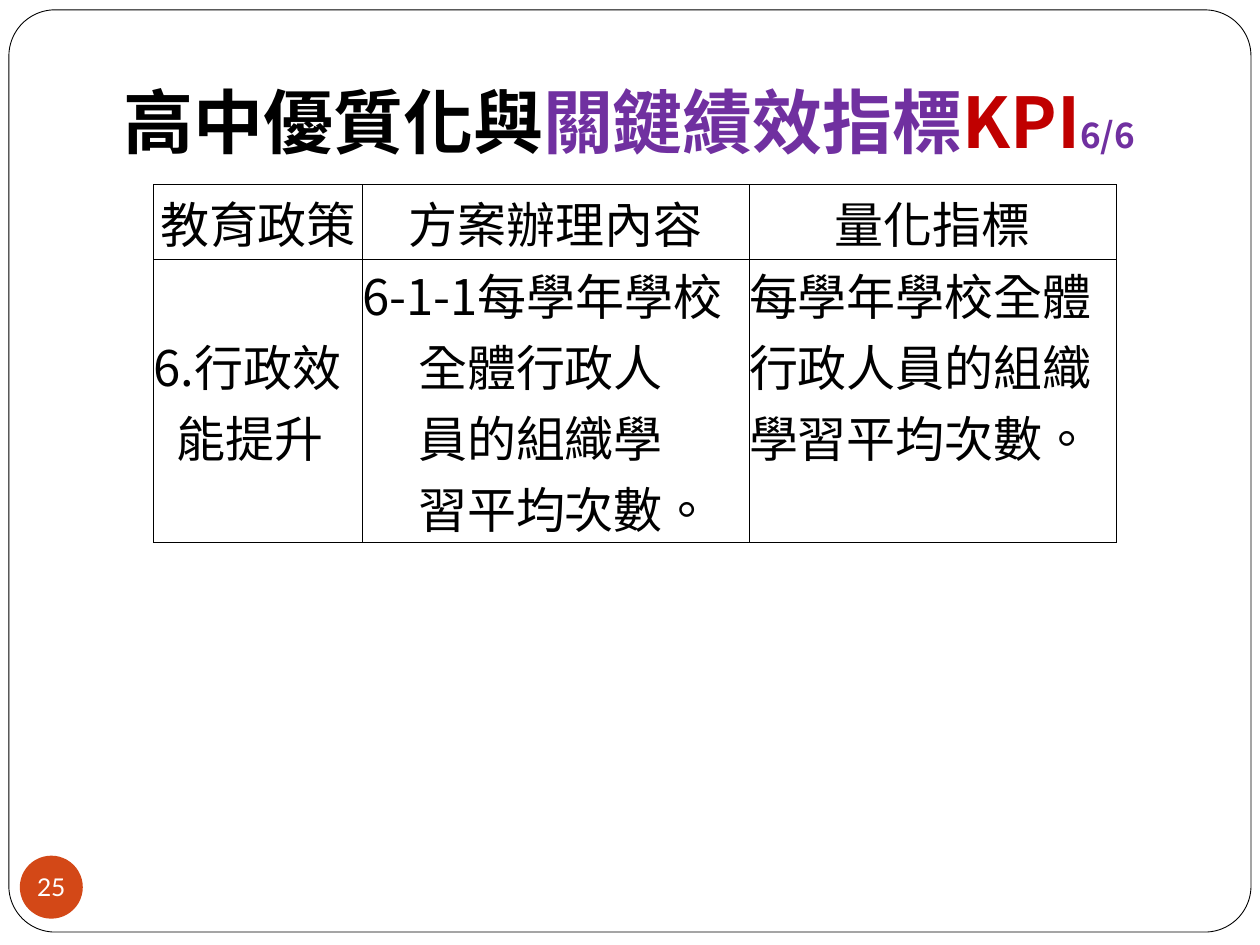
from lxml import etree
from pptx import Presentation, util as u
from pptx.dml.color import RGBColor
from pptx.enum import shapes, text
from pptx.oxml.ns import qn

Cm, Pt = u.Cm, u.Pt
COLORS = {"ink": "000000", "paper": "FFFFFF", "purple": "7030A0",
          "red": "C00000", "orange": "D34817"}
CJK = "Noto Sans CJK SC"


def write(paragraph, words, size=28, color="ink", bold=False, font=CJK,
          align=text.PP_ALIGN.LEFT, indent=0):
    paragraph.alignment = align
    if indent:
        paragraph._p.get_or_add_pPr().set("marL", str(Cm(indent)))
    run = paragraph.add_run()
    run.text = words
    run.font.size, run.font.bold, run.font.name = Pt(size), bold, font
    run.font.color.rgb = RGBColor.from_string(COLORS[color])
    # Traditional Chinese centres its full stops
    run._r.rPr.set("lang", "zh-TW")
    latin = run._r.rPr.find(qn("a:latin"))
    latin.addnext(latin.makeelement(qn("a:ea"), {"typeface": font}))


deck = Presentation()
deck.slide_width, deck.slide_height = Cm(25.4), Cm(19.05)
slide = deck.slides.add_slide(deck.slide_layouts[6])

# Rounded page frame
frame = slide.shapes.add_shape(shapes.MSO_SHAPE.ROUNDED_RECTANGLE,
                               Cm(0.18), Cm(0.2), Cm(25.04), Cm(18.59))
frame.adjustments[0] = 0.05
frame.shadow.inherit = False
frame.fill.solid()
frame.fill.fore_color.rgb = RGBColor.from_string(COLORS["paper"])
frame.line.color.rgb = RGBColor.from_string(COLORS["ink"])
frame.line.width = Pt(0.5)

# Title
title = slide.shapes.add_textbox(Cm(2.24), Cm(0.74), Cm(21.59), Cm(2.79)).text_frame
title.word_wrap = True
title.vertical_anchor = text.MSO_ANCHOR.BOTTOM
title.margin_bottom = Cm(0.25)
for words, color, size in [("高中優質化與", "ink", 40), ("關鍵績效指標", "purple", 40),
                           ("KPI", "red", 40), ("6/6", "purple", 20)]:
    write(title.paragraphs[0], words, size=size, color=color, bold=True)

# Policy table: each cell is a list of lines, continuation lines are indented
column_widths = [4.2, 7.8, 7.4]
row_heights = [1.5, 5.72]
content = [
    [["教育政策"], ["方案辦理內容"], ["量化指標"]],
    [["6.行政效", "能提升"],
     ["6-1-1每學年學校", "全體行政人", "員的組織學", "習平均次數。"],
     ["每學年學校全體行政人員的組織學習平均次數。"]],
]
continuation_indents = [0.46, 1.13, 0]

policies = slide.shapes.add_table(2, 3, Cm(3.1), Cm(3.72), Cm(sum(column_widths)),
                                  Cm(sum(row_heights))).table
for column, width in zip(policies.columns, column_widths):
    column.width = Cm(width)
for row, height in zip(policies.rows, row_heights):
    row.height = Cm(height)

for r, row_content in enumerate(content):
    for c, lines in enumerate(row_content):
        cell = policies.cell(r, c)
        cell.margin_left = cell.margin_right = cell.margin_top = cell.margin_bottom = 0
        centred = r == 0 or c == 0
        cell.vertical_anchor = text.MSO_ANCHOR.MIDDLE if centred else text.MSO_ANCHOR.TOP
        cell.fill.background()
        for i, line in enumerate(lines):
            paragraph = cell.text_frame.paragraphs[0] if i == 0 else cell.text_frame.add_paragraph()
            write(paragraph, line, indent=continuation_indents[c] if i else 0,
                  align=text.PP_ALIGN.CENTER if r == 0 else text.PP_ALIGN.LEFT)
        # Thin border on all four sides
        properties = cell._tc.get_or_add_tcPr()
        for position, side in enumerate(["lnL", "lnR", "lnT", "lnB"]):
            border = properties.makeelement(qn(f"a:{side}"), {"w": str(Pt(0.5))})
            ink = etree.SubElement(border, qn("a:solidFill"))
            etree.SubElement(ink, qn("a:srgbClr"), val=COLORS["ink"])
            properties.insert(position, border)

# Page number badge
badge = slide.shapes.add_shape(shapes.MSO_SHAPE.OVAL, Cm(0.4), Cm(17.25), Cm(1.27), Cm(1.27))
badge.shadow.inherit = False
badge.fill.solid()
badge.fill.fore_color.rgb = RGBColor.from_string(COLORS["orange"])
badge.line.fill.background()
number = badge.text_frame
number.word_wrap = False
number.margin_left = number.margin_right = number.margin_top = number.margin_bottom = 0
number.vertical_anchor = text.MSO_ANCHOR.MIDDLE
write(number.paragraphs[0], "25", size=14, color="paper", font="Lato",
      align=text.PP_ALIGN.CENTER)

deck.save("out.pptx")
